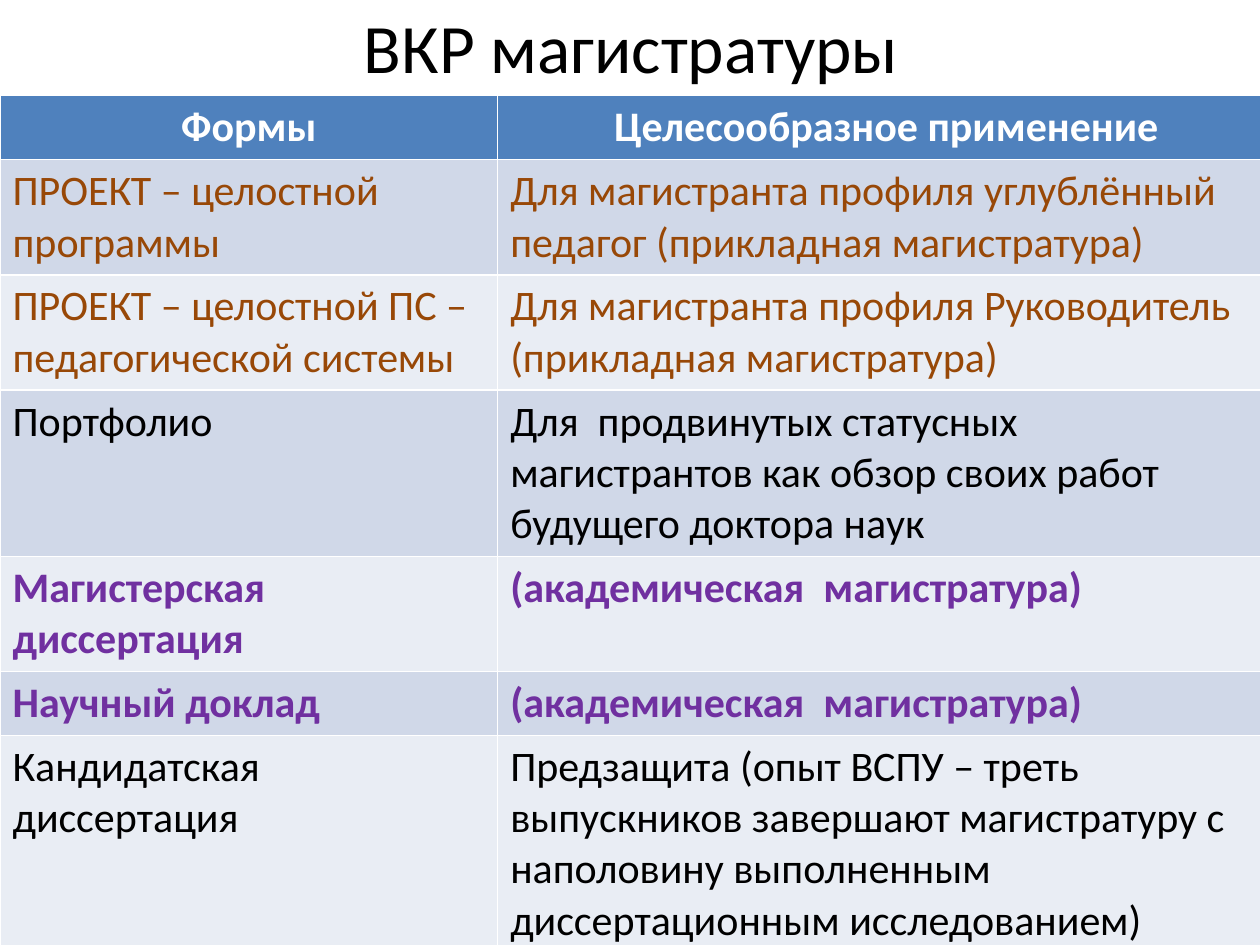
from pptx import Presentation
from pptx.dml.color import RGBColor
from pptx.enum.text import MSO_ANCHOR, MSO_AUTO_SIZE, PP_ALIGN
from pptx.util import Inches, Pt

WHITE = RGBColor(0xFF, 0xFF, 0xFF)
BLACK = RGBColor(0x00, 0x00, 0x00)
BROWN = RGBColor(0x98, 0x48, 0x07)
PURPLE = RGBColor(0x70, 0x30, 0xA0)
HEADER_FILL = RGBColor(0x4F, 0x81, 0xBD)
BAND_FILLS = RGBColor(0xE9, 0xED, 0xF4), RGBColor(0xD0, 0xD8, 0xE8)

TITLE = "ВКР магистратуры"
HEADER = {"color": WHITE, "bold": True}
APPLIED = {"color": BROWN, "bold": False}
PLAIN = {"color": BLACK, "bold": False}
ACADEMIC = {"color": PURPLE, "bold": True}

FORMS = [
    (0.5, HEADER, "Формы", "Целесообразное применение"),
    (0.86, APPLIED, "ПРОЕКТ – целостной программы",
     "Для магистранта профиля углублённый педагог (прикладная магистратура)"),
    (0.86, APPLIED, "ПРОЕКТ – целостной ПС – педагогической системы",
     "Для магистранта профиля Руководитель (прикладная магистратура)"),
    (0.84, PLAIN, "Портфолио",
     "Для  продвинутых статусных магистрантов как обзор своих работ будущего доктора наук"),
    (0.56, ACADEMIC, "Магистерская диссертация", "(академическая  магистратура)"),
    (0.5, ACADEMIC, "Научный доклад", "(академическая  магистратура)"),
    (1.39, PLAIN, "Кандидатская диссертация",
     "Предзащита (опыт ВСПУ – треть выпускников завершают магистратуру "
     "с наполовину выполненным диссертационным исследованием)"),
]
COLUMN_WIDTHS = 3.95, 6.17
TABLE_TOP = 0.76


def write(frame, text, size, color, bold, align):
    paragraph = frame.paragraphs[0]
    paragraph.alignment = align
    run = paragraph.add_run()
    run.text = text
    for name, value in {"name": "Calibri", "size": Pt(size), "bold": bold}.items():
        setattr(run.font, name, value)
    run.font.color.rgb = color


def add_title(slide):
    title = slide.shapes.title
    box = {"left": 0.51, "top": 0.13, "width": 9, "height": 0.46}
    for name, value in box.items():
        setattr(title, name, Inches(value))
    frame = title.text_frame
    frame.auto_size = MSO_AUTO_SIZE.NONE
    frame.vertical_anchor = MSO_ANCHOR.MIDDLE
    write(frame, TITLE, 39.6, BLACK, False, PP_ALIGN.CENTER)


def add_forms_table(slide):
    total_height = sum(height for height, *_ in FORMS)
    table = slide.shapes.add_table(
        len(FORMS), len(COLUMN_WIDTHS), 0, Inches(TABLE_TOP),
        Inches(sum(COLUMN_WIDTHS)), Inches(total_height)).table
    for column, width in zip(table.columns, COLUMN_WIDTHS):
        column.width = Inches(width)
    for index, (height, style, *texts) in enumerate(FORMS):
        row = table.rows[index]
        row.height = Inches(height)
        align = PP_ALIGN.LEFT if index else PP_ALIGN.CENTER
        for cell, text in zip(row.cells, texts):
            cell.fill.solid()
            cell.fill.fore_color.rgb = BAND_FILLS[index % 2] if index else HEADER_FILL
            write(cell.text_frame, text, 24, align=align, **style)


def main():
    deck = Presentation()
    deck.slide_width, deck.slide_height = Inches(10), Inches(7.5)
    slide = deck.slides.add_slide(deck.slide_layouts[5])
    add_title(slide)
    add_forms_table(slide)
    deck.save("out.pptx")


if __name__ == "__main__":
    main()
